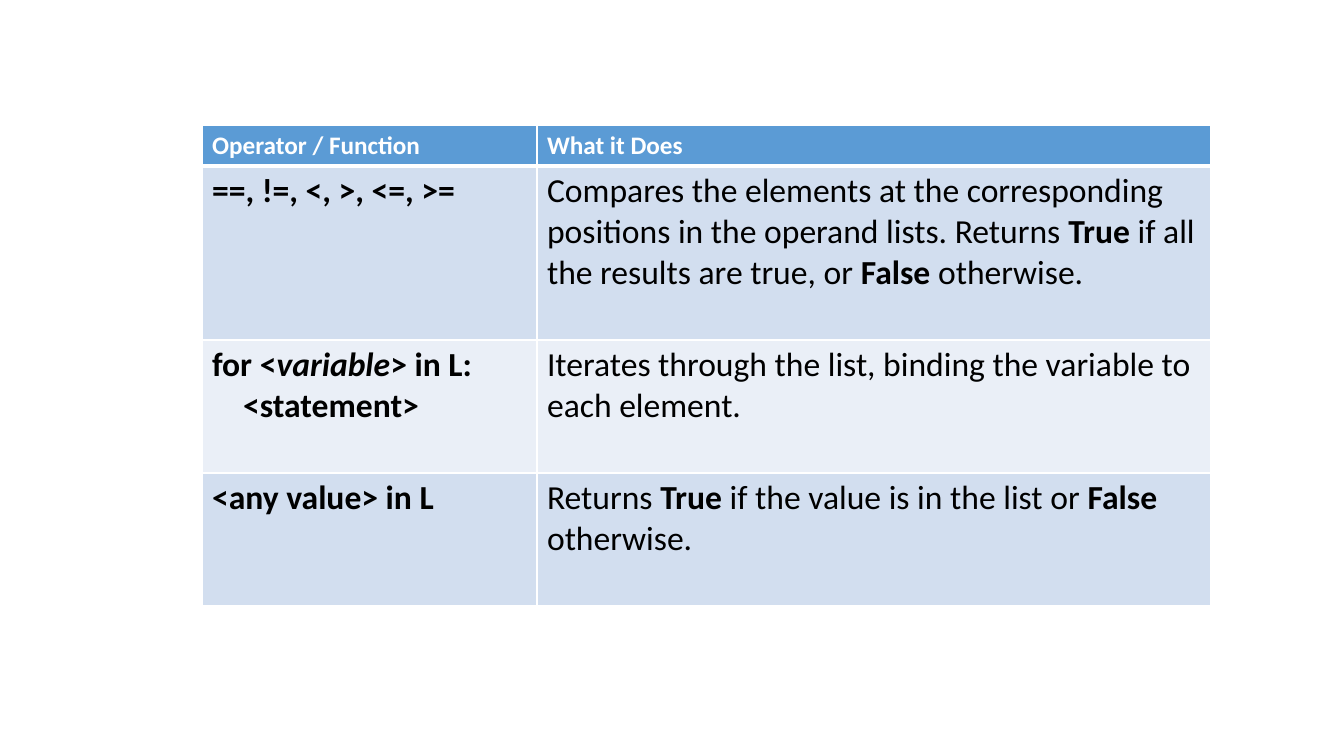
from dataclasses import dataclass

from lxml import etree
from pptx import Presentation
from pptx import util as u
from pptx.dml.color import RGBColor
from pptx.oxml.ns import qn

PX = 914400 / 100.8


def px(length):
    return u.Emu(round(length * PX))


@dataclass(frozen=True)
class Theme:
    font: str = "Calibri"
    header_size: int = 18
    body_size: int = 24
    header_fill: str = "5B9BD5"
    band_fills: tuple = ("D2DEEF", "EAEFF7")
    header_text: str = "FFFFFF"
    body_text: str = "000000"
    border: str = "FFFFFF"
    border_width: int = 1
    header_rule: int = 3


THEME = Theme()
BOLD, ITALIC = "b", "i"
STATEMENT_INDENT = 31
COLUMN_WIDTHS = (335, 674)
ROW_HEIGHTS = (41, 174, 133, 133)

# Each cell is a list of (indent, runs); each run is (text, style)
ROWS = [
    ([(0, [("Operator / Function", BOLD)])],
     [(0, [("What it Does", BOLD)])]),
    ([(0, [("==, !=, <, >, <=, >=", BOLD)])],
     [(0, [("Compares the elements at the corresponding positions in the "
            "operand lists. Returns ", ""), ("True ", BOLD),
           ("if all the results are true, or ", ""), ("False ", BOLD),
           ("otherwise.", "")])]),
    ([(0, [("for <", BOLD), ("variable", BOLD + ITALIC), ("> in L:", BOLD)]),
      (STATEMENT_INDENT, [("<statement>", BOLD)])],
     [(0, [("Iterates through the list, binding the variable to each element.", "")])]),
    ([(0, [("<any value> in L", BOLD)])],
     [(0, [("Returns ", ""), ("True ", BOLD),
           ("if the value is in the list or ", ""), ("False ", BOLD),
           ("otherwise.", "")])]),
]


def set_borders(cell, top, bottom):
    properties = cell._tc.get_or_add_tcPr()
    width = THEME.border_width
    for side, points in (("L", width), ("R", width), ("T", top), ("B", bottom)):
        line = etree.SubElement(properties, qn(f"a:ln{side}"), w=str(u.Pt(points)))
        fill = etree.SubElement(line, qn("a:solidFill"))
        etree.SubElement(fill, qn("a:srgbClr"), val=THEME.border)


def write_cell(cell, paragraphs, size, color):
    frame = cell.text_frame
    for index, (indent, runs) in enumerate(paragraphs):
        paragraph = frame.add_paragraph() if index else frame.paragraphs[0]
        if indent:
            paragraph._p.get_or_add_pPr().set("marL", str(px(indent)))
        for words, style in runs:
            run = paragraph.add_run()
            run.text = words
            run.font.name = THEME.font
            run.font.size = u.Pt(size)
            run.font.bold = BOLD in style
            run.font.italic = ITALIC in style
            run.font.color.rgb = RGBColor.from_string(color)


def add_operator_table(slide, left, top, width, height):
    frame = slide.shapes.add_table(len(ROWS), len(COLUMN_WIDTHS),
                                   px(left), px(top), px(width), px(height))
    table = frame.table
    table.horz_banding = False
    for column, column_width in zip(table.columns, COLUMN_WIDTHS):
        column.width = px(column_width)
    for index, (row, row_height) in enumerate(zip(table.rows, ROW_HEIGHTS)):
        row.height = px(row_height)
        # Header row, then alternating bands
        if index == 0:
            fill, size, color = THEME.header_fill, THEME.header_size, THEME.header_text
        else:
            fill = THEME.band_fills[(index - 1) % 2]
            size, color = THEME.body_size, THEME.body_text
        above = THEME.header_rule if index == 1 else THEME.border_width
        below = THEME.header_rule if index == 0 else THEME.border_width
        for cell, paragraphs in zip(row.cells, ROWS[index]):
            set_borders(cell, above, below)
            cell.fill.solid()
            cell.fill.fore_color.rgb = RGBColor.from_string(fill)
            write_cell(cell, paragraphs, size, color)


def main():
    presentation = Presentation()
    presentation.slide_width = px(1344)
    presentation.slide_height = px(756)
    # Blank layout: the slide has no title
    slide = presentation.slides.add_slide(presentation.slide_layouts[6])
    add_operator_table(slide, 202, 125, sum(COLUMN_WIDTHS), sum(ROW_HEIGHTS))
    presentation.save("out.pptx")


if __name__ == "__main__":
    main()
